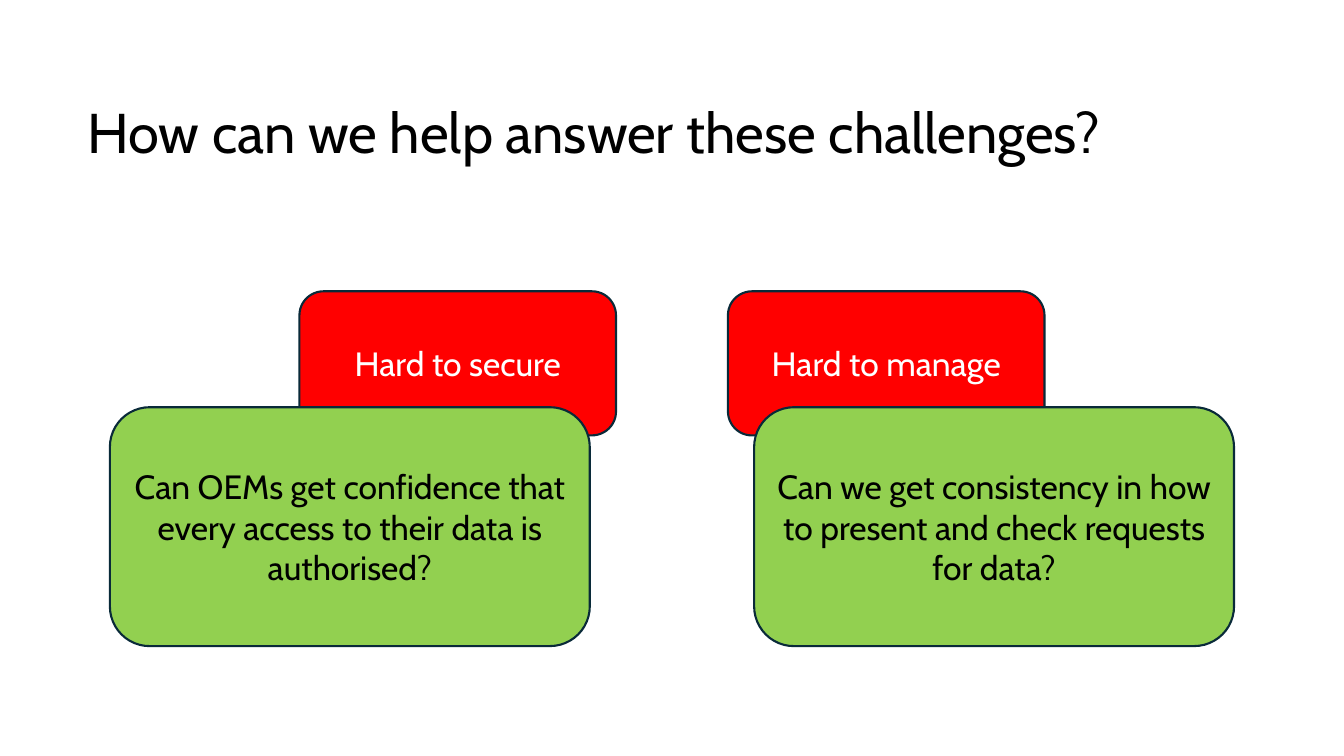
import pptx
import pptx.util
import pptx.dml.color
import pptx.enum.shapes
import pptx.enum.text

Inches = pptx.util.Inches
Pt = pptx.util.Pt
RGBColor = pptx.dml.color.RGBColor

BLACK = RGBColor(0x00, 0x00, 0x00)
WHITE = RGBColor(0xFF, 0xFF, 0xFF)
RED = RGBColor(0xFF, 0x00, 0x00)
GREEN = RGBColor(0x92, 0xD0, 0x50)
OUTLINE = RGBColor(0x09, 0x2A, 0x39)
FONT = "Cabin"

CHALLENGES = [(2.97, "Hard to secure"), (7.22, "Hard to manage")]
QUESTIONS = [
    (1.09, "Can OEMs get confidence that every access to their data is authorised?"),
    (7.48, "Can we get consistency in how to present and check requests for data?"),
]


def write_text(shape, text, size, color, alignment):
    frame = shape.text_frame
    frame.word_wrap = True
    frame.vertical_anchor = pptx.enum.text.MSO_ANCHOR.MIDDLE
    paragraph = frame.paragraphs[0]
    paragraph.text = text
    paragraph.alignment = alignment
    paragraph.font.name = FONT
    paragraph.font.size = Pt(size)
    paragraph.font.color.rgb = color
    return paragraph


def add_title(slide, text):
    title = slide.shapes.add_textbox(Inches(0.77), Inches(0.62), Inches(11.8), Inches(1.45))
    paragraph = write_text(title, text, 40, BLACK, pptx.enum.text.PP_ALIGN.LEFT)
    paragraph.line_spacing = 0.9


def add_card(slide, left, top, width, height, text, fill, color):
    card = slide.shapes.add_shape(
        pptx.enum.shapes.MSO_SHAPE.ROUNDED_RECTANGLE,
        Inches(left), Inches(top), Inches(width), Inches(height),
    )
    card.shadow.inherit = False
    card.fill.solid()
    card.fill.fore_color.rgb = fill
    card.line.color.rgb = OUTLINE
    card.line.width = Pt(1.5)
    write_text(card, text, 24, color, pptx.enum.text.PP_ALIGN.CENTER)


def main():
    presentation = pptx.Presentation()
    presentation.slide_width = Inches(13.33)
    presentation.slide_height = Inches(7.5)
    slide = presentation.slides.add_slide(presentation.slide_layouts[6])
    add_title(slide, "How can we help answer these challenges?")
    for left, text in CHALLENGES:
        add_card(slide, left, 2.89, 3.14, 1.43, text, RED, WHITE)
    for left, text in QUESTIONS:
        add_card(slide, left, 4.04, 4.76, 2.37, text, GREEN, BLACK)
    presentation.save("out.pptx")


if __name__ == "__main__":
    main()
